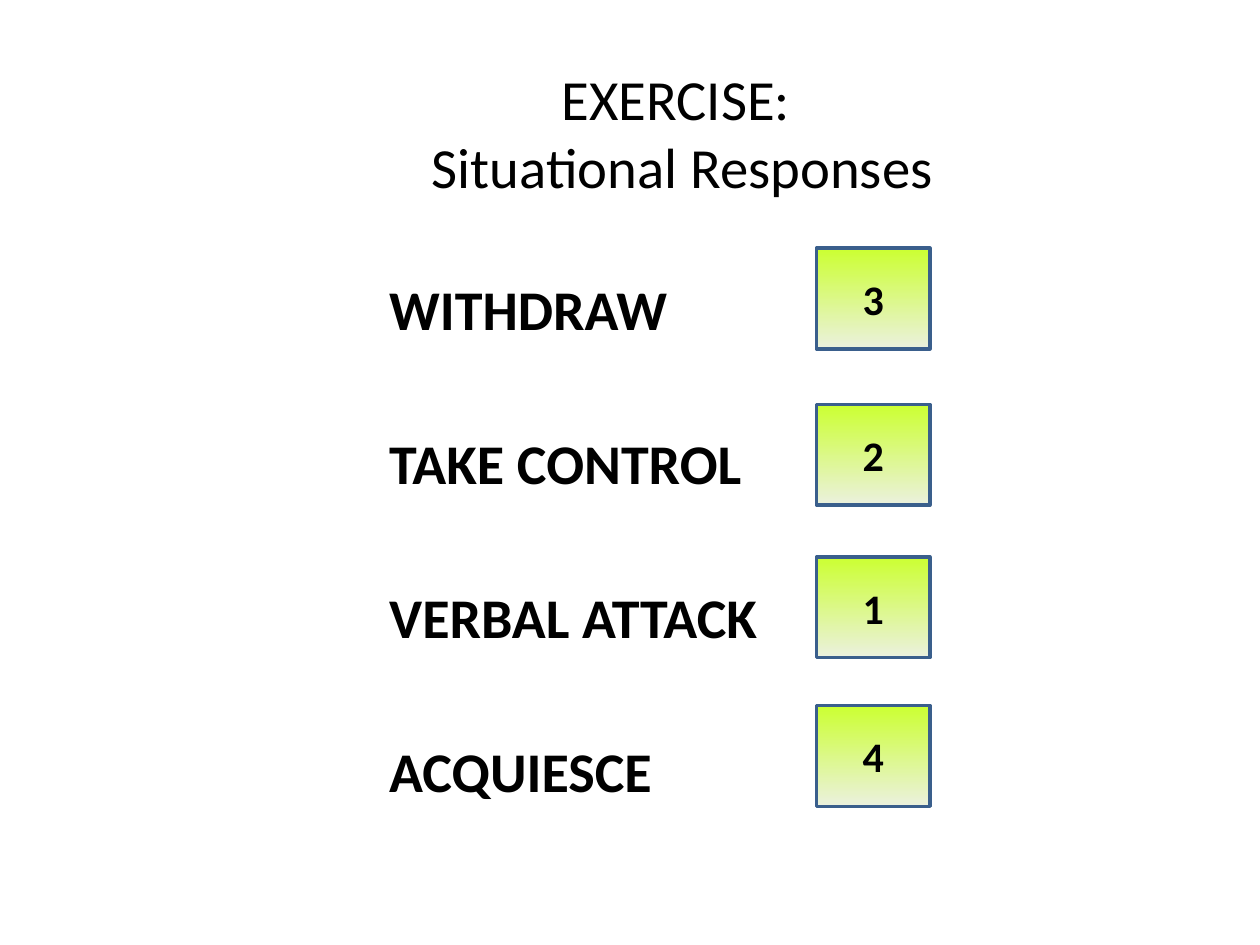
import pptx
import pptx.dml.color
import pptx.enum.shapes
import pptx.enum.text
import pptx.util
from pptx.util import Inches

ALIGN = pptx.enum.text.PP_ALIGN
ANCHOR = pptx.enum.text.MSO_ANCHOR


def color(hex_text):
    return pptx.dml.color.RGBColor.from_string(hex_text)


def style(para, size, bold):
    para.font.name = "Calibri"
    para.font.size = pptx.util.Pt(size)
    para.font.bold = bold
    para.font.color.rgb = color("000000")


deck = pptx.Presentation()
deck.slide_width, deck.slide_height = Inches(10), Inches(7.5)
page = deck.slides.add_slide(deck.slide_layouts[6])

# Response list, with the box top and number that belong to each response
responses = [
    ("WITHDRAW", "3", 1.97),
    ("TAKE CONTROL", "2", 3.21),
    ("VERBAL ATTACK", "1", 4.42),
    ("ACQUIESCE", "4", 5.6),
]
list_box = page.shapes.add_textbox(Inches(2.99), Inches(1.6), Inches(3.49), Inches(5.16))
list_box.text_frame.word_wrap = True
list_box.text_frame.text = "\n".join(name for name, number, top in responses)
for para in list_box.text_frame.paragraphs:
    style(para, 32, True)
    para.line_spacing = 2.0
    para.space_before = pptx.util.Pt(11)

# Title
title_box = page.shapes.add_textbox(Inches(0.83), Inches(0.42), Inches(9.17), Inches(1.25))
title_box.text_frame.word_wrap = True
title_box.text_frame.vertical_anchor = ANCHOR.MIDDLE
title = title_box.text_frame.paragraphs[0]
title.text = "EXERCISE: \vSituational Responses"
title.alignment = ALIGN.CENTER
style(title, 32.4, False)

# Numbered boxes
for name, number, top in responses:
    box = page.shapes.add_shape(
        pptx.enum.shapes.MSO_SHAPE.RECTANGLE,
        Inches(6.48), Inches(top), Inches(0.9), Inches(0.8))
    box.shadow.inherit = False
    box.fill.gradient()
    box.fill.gradient_angle = 270
    for stop, place, shade in zip(box.fill.gradient_stops, (0.01, 1), ("CCFF33", "EBF1DE")):
        stop.position = place
        stop.color.rgb = color(shade)
    box.line.color.rgb = color("3A5F8C")
    box.line.width = pptx.util.Pt(2)
    box.text_frame.vertical_anchor = ANCHOR.MIDDLE
    para = box.text_frame.paragraphs[0]
    para.text = number
    para.alignment = ALIGN.CENTER
    style(para, 24, True)

deck.save("out.pptx")
